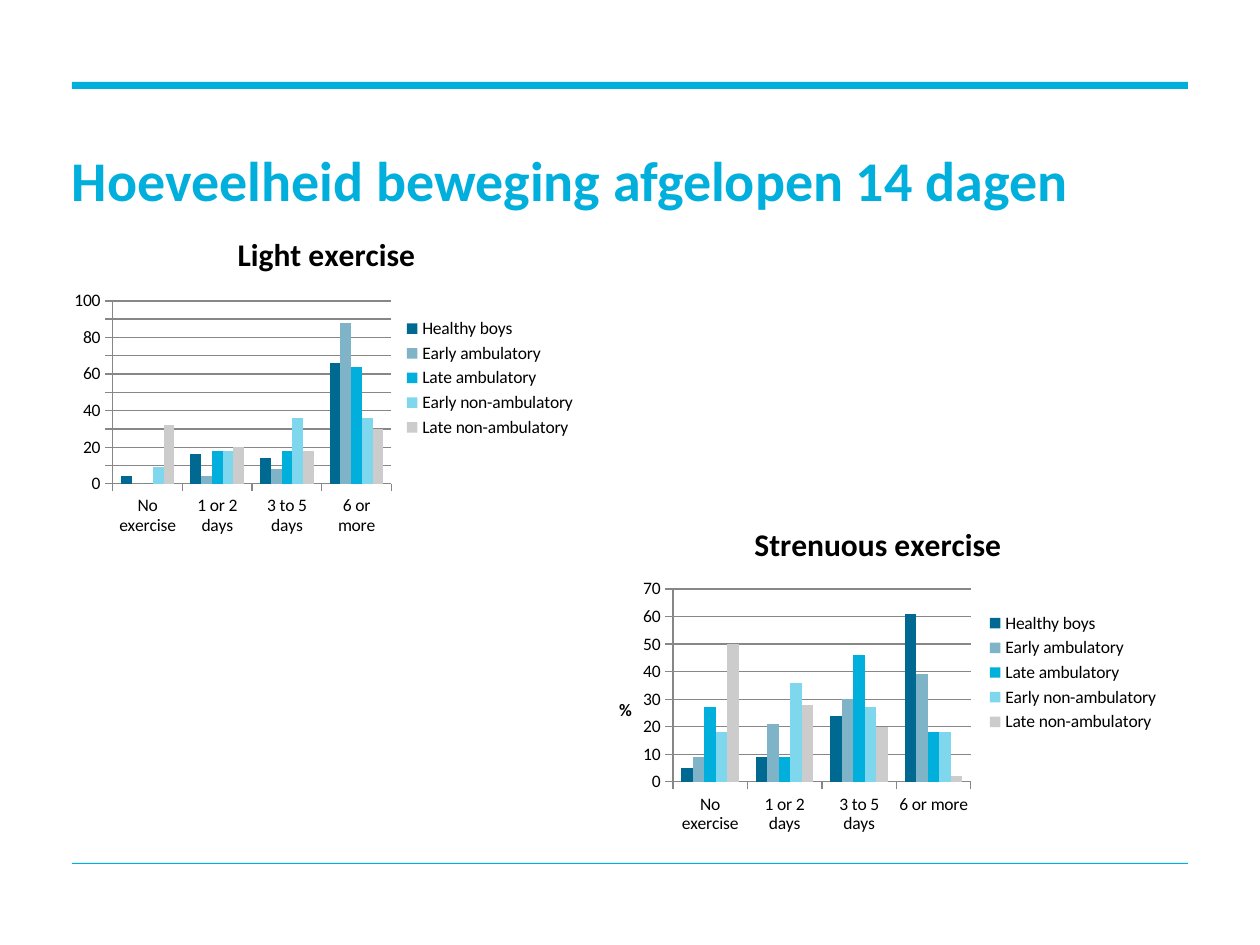
from lxml.etree import SubElement
from pptx import Presentation
from pptx.chart.data import CategoryChartData
from pptx.dml.color import RGBColor
from pptx.enum.chart import XL_CHART_TYPE, XL_LEGEND_POSITION, XL_TICK_MARK
from pptx.enum.shapes import MSO_SHAPE
from pptx.enum.text import MSO_ANCHOR
from pptx.oxml.ns import qn
from pptx.util import Emu, Pt

TITLE = "Hoeveelheid beweging afgelopen 14 dagen"
FONT, CYAN, BLACK, GRAY = "Calibri", "00AFDC", "000000", "878787"
LEFT, WIDTH = 72, 1116
RULES = [(82, 7), (863, 1)]
CATS = ["No exercise", "1 or 2 days", "3 to 5 days", "6 or more"]
GROUPS = [("Healthy boys", "006991"), ("Early ambulatory", "7FB4C8"),
          ("Late ambulatory", CYAN), ("Early non-ambulatory", "7FD7ED"),
          ("Late non-ambulatory", "CCCCCC")]
CHARTS = [
    {"title": "Light exercise", "box": (64, 214, 525, 328),
     "plot": (113, 301, 279, 183), "max": 100,
     "vals": [(4, 16, 14, 66), (0, 4, 8, 88), (0, 18, 18, 64),
              (9, 18, 36, 36), (32, 20, 18, 30)]},
    {"title": "Strenuous exercise ", "box": (591, 503, 581, 339),
     "plot": (673, 589, 298, 193), "max": 70, "unit": "%", "unit_at": (616, 696),
     "vals": [(5, 9, 24, 61), (9, 21, 30, 39), (27, 9, 46, 18),
              (18, 36, 27, 18), (50, 28, 20, 2)]},
]


def px(n):
    return Emu(n * 914400 // 126)


def rgb(color):
    return RGBColor.from_string(color)


def style(font, size, color=BLACK, bold=False):
    font.name, font.size, font.bold = FONT, Pt(size), bold
    font.color.rgb = rgb(color)


def write(tf, text, size, color=BLACK, bold=True, spacing=None):
    p = tf.paragraphs[0]
    if spacing:
        p.line_spacing = Pt(spacing)
    r = p.add_run()
    r.text = text
    style(r.font, size, color, bold)


def place(parent, box, at, inner=False):
    layout = parent.find(qn("c:layout"))
    if layout is None:
        layout = SubElement(parent, qn("c:layout"))
        if inner:
            parent.insert(0, layout)
        else:
            parent.find(qn("c:tx")).addnext(layout)
    manual = SubElement(layout, qn("c:manualLayout"))
    x, y, w, h = box
    parts = [("xMode", "edge"), ("yMode", "edge"),
             ("x", round((at[0] - x) / w, 3)), ("y", round((at[1] - y) / h, 3))]
    if inner:
        parts = [("layoutTarget", "inner"), *parts,
                 ("w", round(at[2] / w, 3)), ("h", round(at[3] / h, 3))]
    for tag, val in parts:
        SubElement(manual, qn(f"c:{tag}")).set("val", str(val))


def add_bars(s, spec):
    data = CategoryChartData()
    data.categories = CATS
    for (name, _), vals in zip(GROUPS, spec["vals"]):
        data.add_series(name, vals)
    box = spec["box"]
    chart = s.shapes.add_chart(
        XL_CHART_TYPE.COLUMN_CLUSTERED, *map(px, box), data).chart
    style(chart.font, 10)
    chart.has_title = True
    write(chart.chart_title.text_frame, spec["title"], 18)
    chart.has_legend = True
    chart.legend.position = XL_LEGEND_POSITION.RIGHT
    chart.legend.include_in_layout = False
    plot = chart.plots[0]
    plot.gap_width, plot.overlap, plot.vary_by_categories = 150, 0, False
    for series, (_, color) in zip(plot.series, GROUPS):
        series.format.fill.solid()
        series.format.fill.fore_color.rgb = rgb(color)
    val = chart.value_axis
    val.minimum_scale, val.maximum_scale, val.major_unit = 0, spec["max"], 10
    val.has_major_gridlines = True
    for axis in (chart.category_axis, val):
        axis.major_tick_mark = XL_TICK_MARK.OUTSIDE
        axis.format.line.color.rgb = rgb(GRAY)
    val.major_gridlines.format.line.color.rgb = rgb(GRAY)
    place(chart.category_axis._element.getparent(), box, spec["plot"], inner=True)
    if "unit" in spec:
        title = val.axis_title
        write(title.text_frame, spec["unit"], 10)
        body = title._element.find(".//" + qn("a:bodyPr"))
        body.set("rot", "0")
        body.set("vert", "horz")
        place(title._element, box, spec["unit_at"])


def main():
    """Build the slide with its title, two rules and two bar charts."""
    prs = Presentation()
    prs.slide_width, prs.slide_height = px(1260), px(945)
    s = prs.slides.add_slide(prs.slide_layouts[6])
    for top, height in RULES:
        sp = s.shapes.add_shape(
            MSO_SHAPE.RECTANGLE, px(LEFT), px(top), px(WIDTH), px(height))
        sp.shadow.inherit = False
        sp.fill.solid()
        sp.fill.fore_color.rgb = rgb(CYAN)
        sp.line.fill.background()
    tf = s.shapes.add_textbox(px(LEFT), px(139), px(WIDTH), px(73)).text_frame
    tf.word_wrap = True
    tf.vertical_anchor = MSO_ANCHOR.MIDDLE
    tf.margin_left = tf.margin_right = tf.margin_top = tf.margin_bottom = 0
    write(tf, TITLE, 32, color=CYAN, spacing=42)
    for spec in CHARTS:
        add_bars(s, spec)
    prs.save("out.pptx")


if __name__ == "__main__":
    main()
